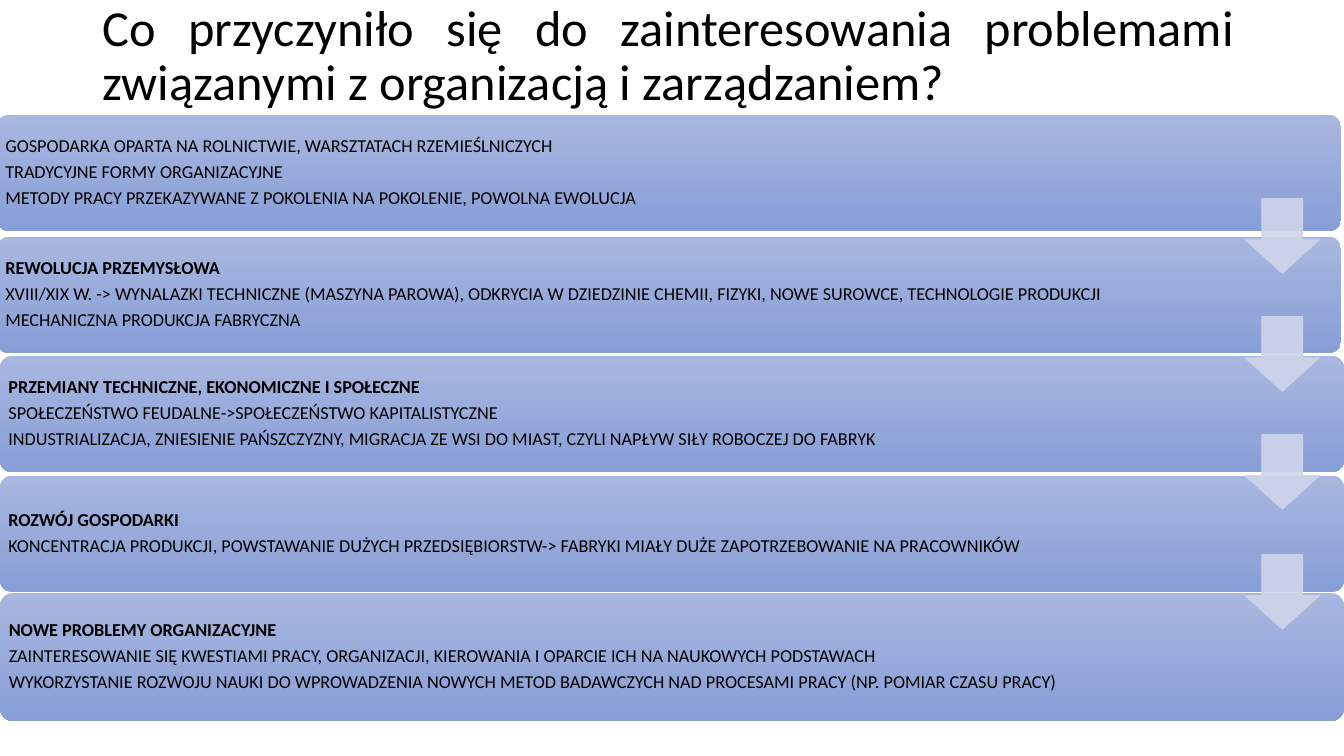
from lxml import etree
from pptx import Presentation
from pptx.dml.color import RGBColor
from pptx.enum import shapes, text
from pptx.oxml import ns
from pptx.util import Pt


def paint(color_format, hex_color, alpha=None):
    """Set a solid colour, with an opacity in percent if alpha is given."""
    color_format.rgb = RGBColor.from_string(hex_color)
    if alpha is not None:
        return hex_color, alpha


def style_paragraph(paragraph, size, align, bold=False):
    paragraph.alignment = align
    paragraph.line_spacing = 0.9
    paragraph.font.name = "Calibri"
    paragraph.font.size = Pt(size)
    paragraph.font.bold = bold
    paint(paragraph.font.color, "000000")


prs = Presentation()
prs.slide_width, prs.slide_height = Pt(960), Pt(540)
slide = prs.slides.add_slide(prs.slide_layouts[5])

title = slide.shapes.title
title.left, title.top, title.width, title.height = Pt(66), Pt(0), Pt(823), Pt(82)
title.text_frame.text = "Co przyczyniło się do zainteresowania problemami związanymi z organizacją i zarządzaniem?"
title.text_frame.auto_size = text.MSO_AUTO_SIZE.NONE
title.text_frame.vertical_anchor = text.MSO_ANCHOR.MIDDLE
style_paragraph(title.text_frame.paragraphs[0], 36, text.PP_ALIGN.JUSTIFY)

# left, top, height, alignment, heading (may be empty), lines
JUSTIFY, LEFT = text.PP_ALIGN.JUSTIFY, text.PP_ALIGN.LEFT
stages = [
    (-2.2, 82.1, 82.8, JUSTIFY, "", [
        "GOSPODARKA OPARTA NA ROLNICTWIE, WARSZTATACH RZEMIEŚLNICZYCH",
        "TRADYCYJNE FORMY ORGANIZACYJNE",
        "METODY PRACY PRZEKAZYWANE Z POKOLENIA NA POKOLENIE, POWOLNA EWOLUCJA"]),
    (-2.2, 169.2, 82.8, JUSTIFY, "REWOLUCJA PRZEMYSŁOWA", [
        "XVIII/XIX W. -> WYNALAZKI TECHNICZNE (MASZYNA PAROWA), ODKRYCIA W DZIEDZINIE CHEMII, "
        "FIZYKI, NOWE SUROWCE, TECHNOLOGIE PRODUKCJI",
        "MECHANICZNA PRODUKCJA FABRYCZNA"]),
    (0, 254.3, 82.8, LEFT, "PRZEMIANY TECHNICZNE, EKONOMICZNE I SPOŁECZNE", [
        "SPOŁECZEŃSTWO FEUDALNE->SPOŁECZEŃSTWO KAPITALISTYCZNE",
        "INDUSTRIALIZACJA, ZNIESIENIE PAŃSZCZYZNY, MIGRACJA ZE WSI DO MIAST, "
        "CZYLI NAPŁYW SIŁY ROBOCZEJ DO FABRYK"]),
    (0, 339.7, 82.8, LEFT, "ROZWÓJ GOSPODARKI", [
        "KONCENTRACJA PRODUKCJI, POWSTAWANIE DUŻYCH PRZEDSIĘBIORSTW-> "
        "FABRYKI MIAŁY DUŻE ZAPOTRZEBOWANIE NA PRACOWNIKÓW"]),
    (0, 423.6, 91.4, LEFT, "NOWE PROBLEMY ORGANIZACYJNE", [
        "ZAINTERESOWANIE SIĘ KWESTIAMI PRACY, ORGANIZACJI, KIEROWANIA "
        "I OPARCIE ICH NA NAUKOWYCH PODSTAWACH",
        "WYKORZYSTANIE ROZWOJU NAUKI DO WPROWADZENIA NOWYCH METOD BADAWCZYCH "
        "NAD PROCESAMI PRACY (NP. POMIAR CZASU PRACY)"]),
]

for left, top, height, align, heading, lines in stages:
    band = slide.shapes.add_shape(
        shapes.MSO_SHAPE.ROUNDED_RECTANGLE, Pt(left), Pt(top), Pt(960), Pt(height))
    band.adjustments[0] = 0.1
    band.shadow.inherit = False
    band.line.fill.background()
    band.fill.gradient()
    band.fill.gradient_angle = 270
    for stop, hex_color in zip(band.fill.gradient_stops, ["A8B7DF", "889ED7"]):
        paint(stop.color, hex_color)

    frame = band.text_frame
    frame.word_wrap = True
    frame.vertical_anchor = text.MSO_ANCHOR.MIDDLE
    frame.margin_left = frame.margin_top = frame.margin_bottom = Pt(3.6)
    frame.margin_right = Pt(130)
    frame.text = "\n".join([heading] * bool(heading) + lines)
    for paragraph in frame.paragraphs:
        style_paragraph(paragraph, 13, align, bold=paragraph.text == heading)
        paragraph.space_after = Pt(4.5)

for top in [141.8, 226.1, 310.3, 396]:
    arrow = slide.shapes.add_shape(
        shapes.MSO_SHAPE.DOWN_ARROW, Pt(889.2), Pt(top), Pt(53.5), Pt(53.5))
    arrow.adjustments[0], arrow.adjustments[1] = 0.55, 0.45
    arrow.shadow.inherit = False
    arrow.fill.solid()
    paint(arrow.fill.fore_color, "CFD5EA")
    arrow.line.width = Pt(0.5)
    paint(arrow.line.color, "CFD5EA")
    for color in arrow.element.spPr.iter(ns.qn("a:srgbClr")):
        etree.SubElement(color, ns.qn("a:alpha"), val="90000")

prs.save("out.pptx")
